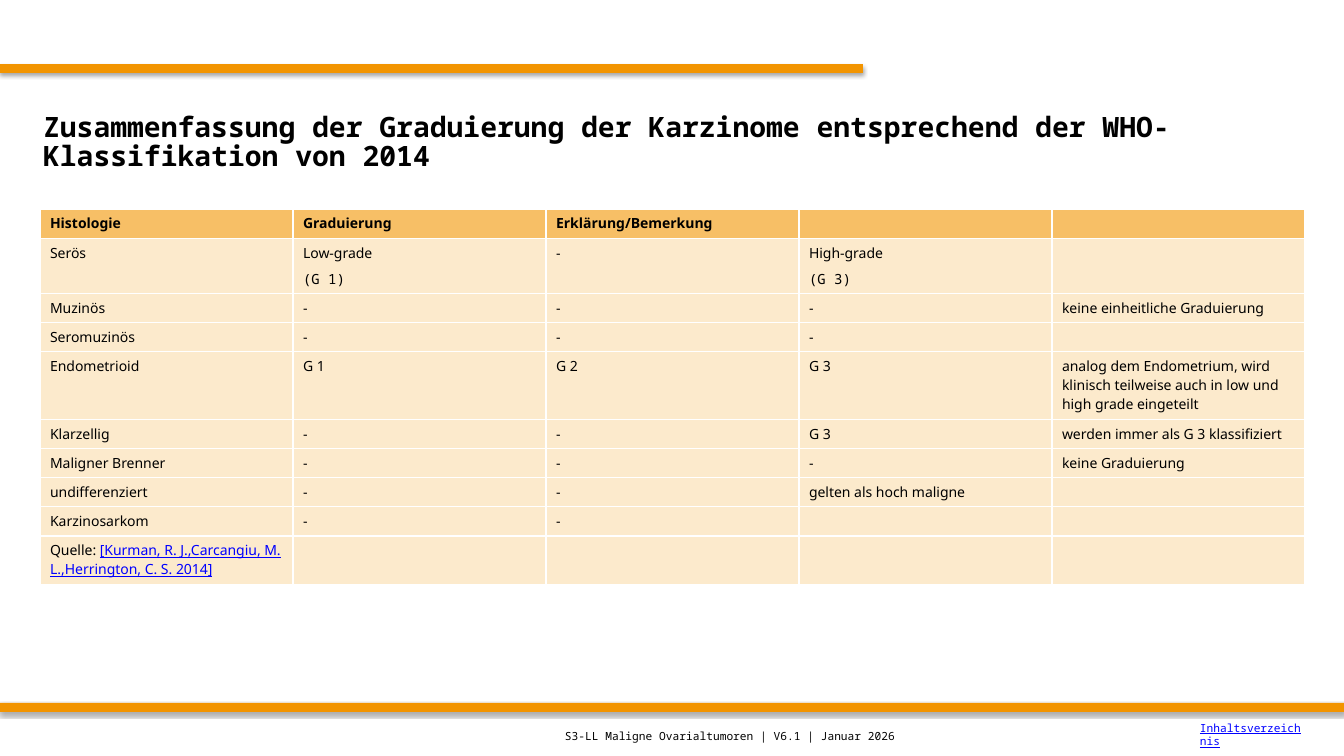
from lxml import etree
from pptx import Presentation
from pptx.dml.color import RGBColor
from pptx.enum.shapes import MSO_SHAPE
from pptx.enum.text import MSO_ANCHOR, PP_ALIGN
from pptx.oxml import parse_xml
from pptx.oxml.ns import nsdecls, qn
from pptx.util import Pt

PX = 914400 / 100.8
SANS, MONO = "Noto Sans", "Noto Sans Mono"
ORANGE, HEADER, BODY, BLACK, LINK = "F29400", "F7BF66", "FCEACC", "000000", "0000FF"

HEADINGS = ["Histologie", "Graduierung", "Erklärung/Bemerkung", "", ""]
GRADES = [
    ["Serös", "Low-grade\n(G 1)", "-", "High-grade\n(G 3)", ""],
    ["Muzinös", "-", "-", "-", "keine einheitliche Graduierung"],
    ["Seromuzinös", "-", "-", "-", ""],
    ["Endometrioid", "G 1", "G 2", "G 3",
     "analog dem Endometrium, wird klinisch teilweise auch in low und high grade eingeteilt"],
    ["Klarzellig", "-", "-", "G 3", "werden immer als G 3 klassifiziert"],
    ["Maligner Brenner", "-", "-", "-", "keine Graduierung"],
    ["undifferenziert", "-", "-", "gelten als hoch maligne", ""],
    ["Karzinosarkom", "-", "-", "", ""],
    ["Quelle: ", "", "", "", ""],
]
SOURCE = "[Kurman, R. J.,Carcangiu, M. L.,Herrington, C. S. 2014]"
ROW_HEIGHTS = [28, 55, 29, 29, 68, 29, 29, 29, 29, 48]


def px(n):
    return round(n * PX)


def box(x, y, w, h):
    return px(x), px(y), px(w), px(h)


def rgb(value):
    return RGBColor.from_string(value)


def add_text(p, text, size=10, font=SANS, color=BLACK, bold=False, underline=False):
    r = p.add_run()
    r.text = text
    f = r.font
    f.size, f.name, f.bold = Pt(size), font, bold
    f.color.rgb = rgb(color)
    if underline:
        f.underline = True


def add_bar(s, *area):
    sp = s.shapes.add_shape(MSO_SHAPE.RECTANGLE, *box(*area))
    sp.fill.solid()
    sp.fill.fore_color.rgb = rgb(ORANGE)
    sp.line.fill.background()
    sp._element.spPr.append(parse_xml(
        f'<a:effectLst {nsdecls("a")}><a:outerShdw blurRad="40000" dist="23000" '
        'dir="5400000" rotWithShape="0"><a:srgbClr val="000000"><a:alpha val="35000"/>'
        '</a:srgbClr></a:outerShdw></a:effectLst>'))


def add_title(s, *area):
    sp = s.shapes.title
    sp.left, sp.top, sp.width, sp.height = box(*area)
    tf = sp.text_frame
    tf.vertical_anchor = MSO_ANCHOR.MIDDLE
    p = tf.paragraphs[0]
    p.alignment = PP_ALIGN.LEFT
    p.line_spacing = 0.87
    add_text(p, "Zusammenfassung der Graduierung der Karzinome entsprechend der "
                "WHO-Klassifikation von 2014", size=20, font=MONO, bold=True)


def fill_cell(cell, text, fill, bold):
    cell.fill.solid()
    cell.fill.fore_color.rgb = rgb(fill)
    tf = cell.text_frame
    for i, line in enumerate(text.split("\n")):
        p = tf.add_paragraph() if i else tf.paragraphs[0]
        p.space_after = Pt(5)
        if line:
            add_text(p, line, font=MONO if i else SANS, bold=bold)
        else:
            # An empty cell would otherwise take the height of 18 pt text
            etree.SubElement(p._p, qn("a:endParaRPr"), sz="1000")


def add_grade_table(s, x, y, w):
    rows = [HEADINGS] + GRADES
    table = s.shapes.add_table(
        len(rows), len(HEADINGS), *box(x, y, w, sum(ROW_HEIGHTS))).table
    table.horz_banding = False
    for col in table.columns:
        col.width = px(w / len(HEADINGS))
    for i, (row, height) in enumerate(zip(rows, ROW_HEIGHTS)):
        table.rows[i].height = px(height)
        for j, text in enumerate(row):
            fill_cell(table.cell(i, j), text, BODY if i else HEADER, bold=i == 0)
    source_cell = table.cell(len(rows) - 1, 0)
    add_text(source_cell.text_frame.paragraphs[0], SOURCE, color=LINK, underline=True)


def add_footer_text(s, area, text, **style):
    tf = s.shapes.add_textbox(*box(*area)).text_frame
    tf.word_wrap = True
    tf.vertical_anchor = MSO_ANCHOR.MIDDLE
    add_text(tf.paragraphs[0], text, size=8, font=MONO, **style)


def main():
    prs = Presentation()
    prs.slide_width, prs.slide_height = px(1344), px(756)
    s = prs.slides.add_slide(prs.slide_layouts[5])
    add_bar(s, 0, 64, 863, 9)
    add_bar(s, 0, 703, 1344, 9)
    add_title(s, 33, 84, 1277, 118)
    add_grade_table(s, 40, 209, 1265)
    add_footer_text(s, (555, 717, 555, 39), "S3-LL Maligne Ovarialtumoren | V6.1 | Januar 2026")
    add_footer_text(s, (1190, 715, 123, 39), "Inhaltsverzeichnis", color=LINK, underline=True)
    prs.save("out.pptx")


if __name__ == "__main__":
    main()
